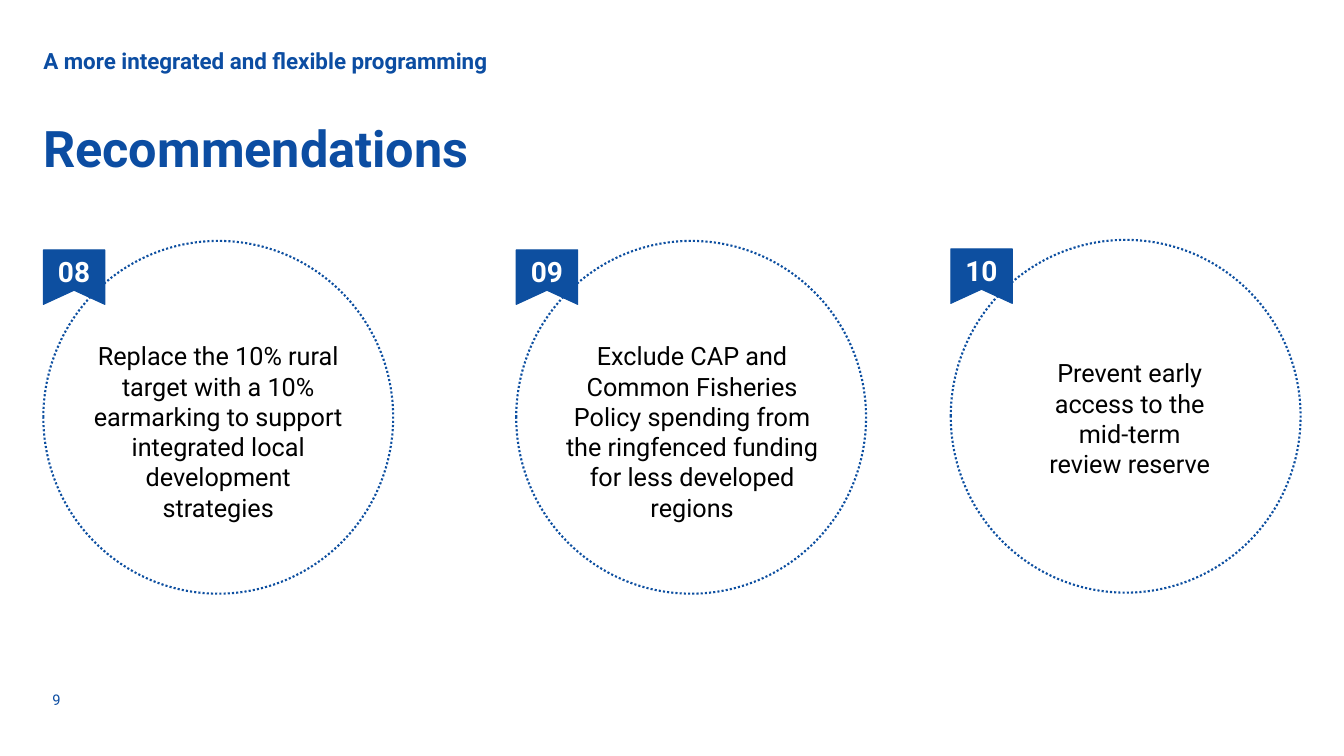
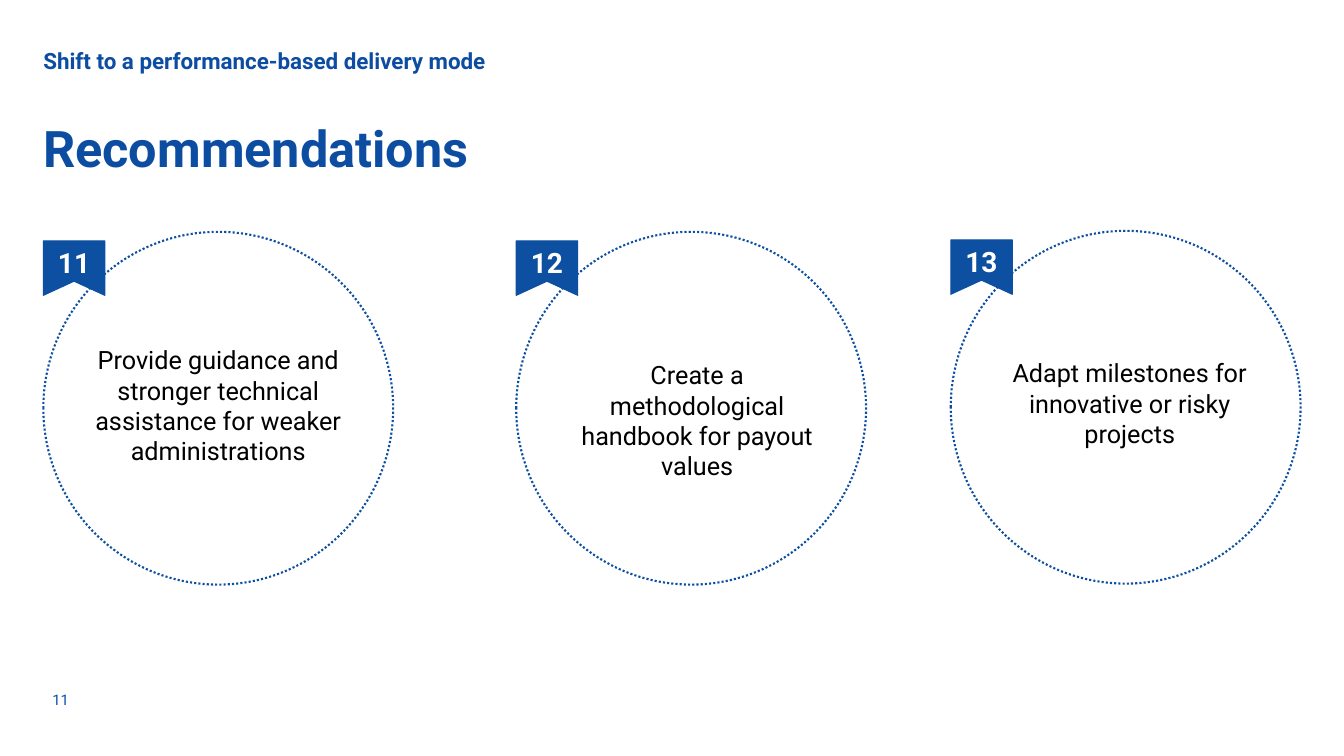
from pptx import Presentation
from pptx.dml.color import RGBColor
from pptx.enum import dml, shapes, text
from pptx.util import Inches, Pt

FONT = "Roboto"
NAVY = RGBColor(0x0C, 0x4D, 0xA2)
BLUE = RGBColor(0x0D, 0x4F, 0xA0)
BLACK = RGBColor(0, 0, 0)
WHITE = RGBColor(255, 255, 255)
MID = text.PP_ALIGN.CENTER

# Shared layout, in inches
EDGE = 0.43
WIDE, HIGH = 3.47, 3.5
TAG_W, TAG_H, NOTCH = 0.61, 0.54, 0.14
COLS = [(0.43, 0), (5.12, 0), (9.43, -0.01)]  # left edge, shift down

# Each card: number, text lines, left and top of the text
DECK = [
    ("9", "A more integrated and flexible programming", 2.39, [
        ("08", "Replace the 10% rural target with a 10% earmarking to support "
               "integrated local development\nstrategies", 0.78, 3.33),
        ("09", "Exclude CAP and Common Fisheries Policy spending from the "
               "ringfenced funding for less developed regions", 5.48, 3.33),
        ("10", "Prevent early\naccess to the\nmid-term\nreview reserve",
         9.82, 3.5)]),
    ("11", "Shift to a performance-based delivery mode", 2.3, [
        ("11", "Provide guidance and stronger technical assistance for weaker "
               "administrations", 0.78, 3.37),
        ("12", "Create a methodological handbook for payout values",
         5.53, 3.52),
        ("13", "Adapt milestones for innovative or risky projects",
         9.82, 3.5)]),
]


def write(shape, words, size, color, bold=False, align=None, gap=None):
    """Fill a shape with text in one style."""
    frame = shape.text_frame
    frame.word_wrap = True
    frame.text = words
    for para in frame.paragraphs:
        para.alignment = align
        para.line_spacing = gap
        for run in para.runs:
            run.font.name = FONT
            run.font.size = Pt(size)
            run.font.bold = bold
            run.font.color.rgb = color
    return frame


def label(slide, box, words, size, **style):
    """Add a blue text box without insets."""
    shape = slide.shapes.add_textbox(*map(Inches, box))
    frame = write(shape, words, size, NAVY, **style)
    frame.margin_left = frame.margin_right = 0
    frame.margin_top = frame.margin_bottom = 0
    return frame


prs = Presentation()
prs.slide_width = Inches(13.33)
prs.slide_height = Inches(7.5)

for page, topic, top, cards in DECK:
    slide = prs.slides.add_slide(prs.slide_layouts[6])

    # Page number, topic and title
    foot = label(slide, (0.52, 6.74, 0.81, 0.4), page, 10.5)
    foot.vertical_anchor = text.MSO_ANCHOR.MIDDLE
    label(slide, (EDGE, 0.44, 7.48, 0.4), topic, 16, bold=True, gap=1.1)
    label(slide, (EDGE, 1.23, 9.12, 0.89), "Recommendations", 36,
          bold=True, gap=0.9)

    for (left, shift), (num, words, x, y) in zip(COLS, cards):
        group = slide.shapes.add_group_shape().shapes

        # Dotted circle
        ring = group.add_shape(
            shapes.MSO_SHAPE.OVAL, Inches(left), Inches(top + shift),
            Inches(WIDE), Inches(HIGH))
        ring.shadow.inherit = False
        ring.fill.background()
        ring.line.color.rgb = BLUE
        ring.line.width = Pt(1.5)
        ring.line.dash_style = dml.MSO_LINE.ROUND_DOT

        # Notched ribbon with the number
        head = top + shift + 0.09
        right, base = left + TAG_W, head + TAG_H
        pen = group.build_freeform(
            Inches(left + TAG_W / 2), Inches(base - NOTCH))
        pen.add_line_segments(
            [(Inches(a), Inches(b)) for a, b in
             [(right, base), (right, head), (left, head), (left, base)]])
        tag = pen.convert_to_shape()
        tag.shadow.inherit = False
        tag.fill.solid()
        tag.fill.fore_color.rgb = BLUE
        tag.line.color.rgb = BLUE
        tag.line.width = Pt(0.75)
        frame = write(tag, num, 20, WHITE, bold=True, align=MID)
        frame.vertical_anchor = text.MSO_ANCHOR.TOP

        # Recommendation
        note = slide.shapes.add_textbox(
            Inches(x), Inches(y), Inches(2.77), Inches(1.31))
        frame = write(note, words, 18, BLACK, align=MID)
        frame.auto_size = text.MSO_AUTO_SIZE.SHAPE_TO_FIT_TEXT

prs.save("out.pptx")
